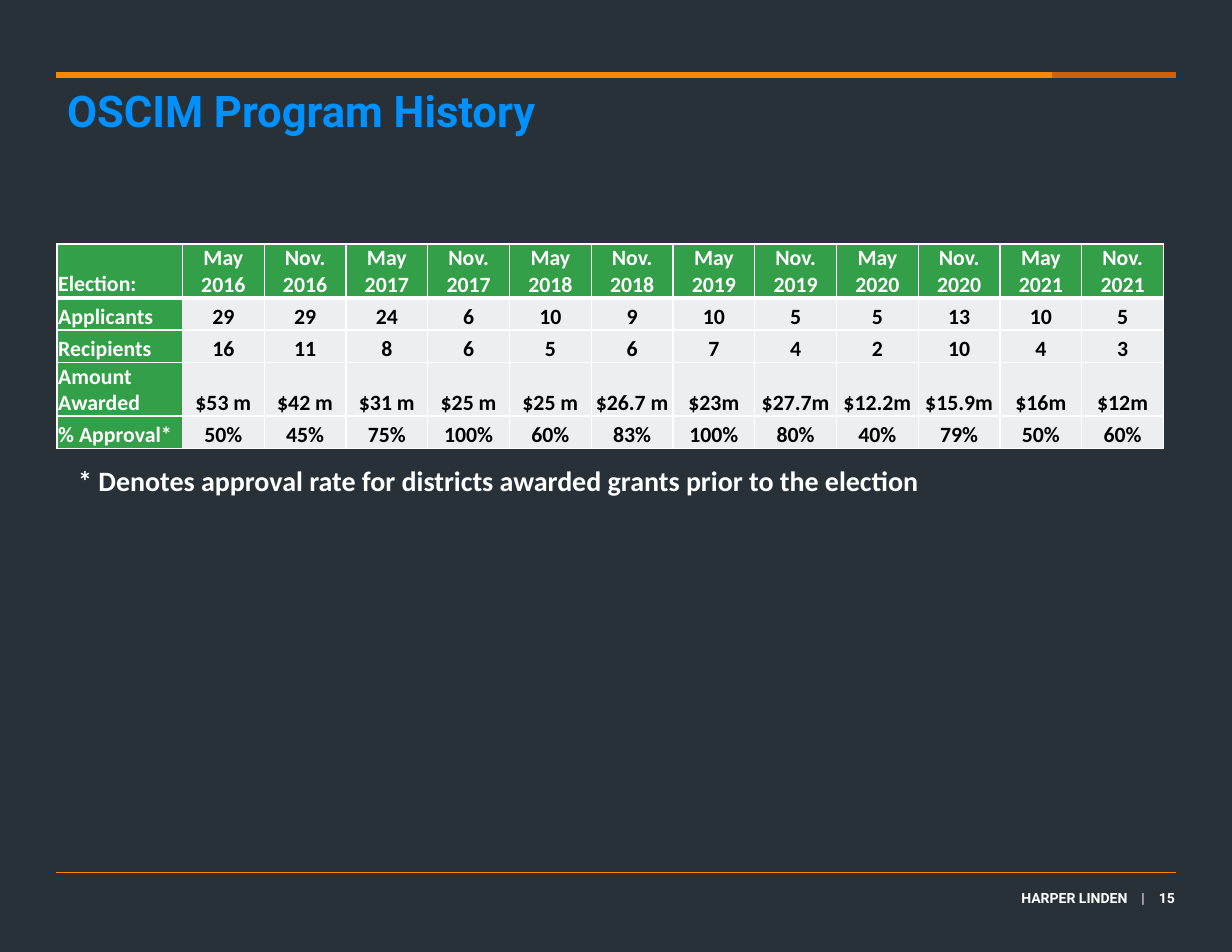
from dataclasses import dataclass

from lxml import etree
from pptx import Presentation
from pptx import util as u
from pptx.dml.color import RGBColor
from pptx.enum import shapes, text
from pptx.oxml import ns

COLORS = {
    "background": "283138",
    "orange": "FF8600",
    "rust": "D2610C",
    "blue": "0091FE",
    "green": "339F48",
    "pale": "EDEEEF",
    "white": "FFFFFF",
    "black": "000000",
}


@dataclass
class Rule:
    left: float
    right: float
    y: float
    color: str
    weight: float


@dataclass
class Style:
    font: str
    size: float
    color: str
    bold: bool = True


RULES = [
    Rule(0.5, 10.5, 0.67, "orange", 3.5),
    Rule(9.39, 10.5, 0.67, "rust", 3.5),
    Rule(0.5, 10.5, 7.79, "orange", 1),
]
HISTORY = [
    ["Election:", "May 2016", "Nov. 2016", "May 2017", "Nov. 2017", "May\n2018", "Nov.\n2018",
     "May\n2019", "Nov.\n2019", "May 2020", "Nov. 2020", "May\n2021", "Nov.\n2021"],
    ["Applicants", "29", "29", "24", "6", "10", "9", "10", "5", "5", "13", "10", "5"],
    ["Recipients", "16", "11", "8", "6", "5", "6", "7", "4", "2", "10", "4", "3"],
    ["Amount Awarded", "$53 m", "$42 m", "$31 m", "$25 m", "$25 m", "$26.7 m", "$23m",
     "$27.7m", "$12.2m", "$15.9m", "$16m", "$12m"],
    ["% Approval*", "50%", "45%", "75%", "100%", "60%", "83%", "100%", "80%", "40%", "79%",
     "50%", "60%"],
]
ROW_HEIGHTS = [0.47, 0.29, 0.29, 0.47, 0.29]
LABEL_WIDTH, ELECTION_WIDTH = 1.12, 0.73
FOOTER_GAP = 6.75


def rgb(color: str) -> RGBColor:
    return RGBColor.from_string(COLORS[color])


def style_run(run, style: Style) -> None:
    run.font.name = style.font
    run.font.size = u.Pt(style.size)
    run.font.bold = style.bold
    run.font.color.rgb = rgb(style.color)


def style_frame(frame, style: Style, align: text.PP_ALIGN) -> None:
    for paragraph in frame.paragraphs:
        paragraph.alignment = align
        for run in paragraph.runs:
            style_run(run, style)


def draw_rule(slide, rule: Rule) -> None:
    line = slide.shapes.add_connector(
        shapes.MSO_CONNECTOR.STRAIGHT, u.Inches(rule.left), u.Inches(rule.y),
        u.Inches(rule.right), u.Inches(rule.y))
    line.line.color.rgb = rgb(rule.color)
    line.line.width = u.Pt(rule.weight)
    etree.SubElement(line._element.spPr, ns.qn("a:effectLst"))


def add_frame(slide, left: float, top: float, width: float, height: float, inset: bool = False):
    """Add a wrapping text box, without margins unless inset, and return its frame."""
    box = slide.shapes.add_textbox(*map(u.Inches, (left, top, width, height)))
    frame = box.text_frame
    frame.word_wrap = True
    if not inset:
        frame.margin_left = frame.margin_right = frame.margin_top = frame.margin_bottom = 0
    return frame


def set_borders(cell, top: float, bottom: float) -> None:
    """Draw white borders, 1 pt at the sides and the given points above and below."""
    properties = cell._tc.get_or_add_tcPr()
    for side, weight in (("L", 1), ("R", 1), ("T", top), ("B", bottom)):
        border = etree.SubElement(properties, ns.qn(f"a:ln{side}"), w=str(u.Pt(weight)))
        fill = etree.SubElement(border, ns.qn("a:solidFill"))
        etree.SubElement(fill, ns.qn("a:srgbClr"), val=COLORS["white"])


def draw_history(slide) -> None:
    elections = len(HISTORY[0]) - 1
    table = slide.shapes.add_table(
        len(HISTORY), elections + 1, u.Inches(0.51), u.Inches(2.18),
        u.Inches(LABEL_WIDTH + elections * ELECTION_WIDTH), u.Inches(sum(ROW_HEIGHTS))).table
    for index, column in enumerate(table.columns):
        column.width = u.Inches(ELECTION_WIDTH if index else LABEL_WIDTH)
    for r, (values, height) in enumerate(zip(HISTORY, ROW_HEIGHTS)):
        table.rows[r].height = u.Inches(height)
        for c, value in enumerate(values):
            cell = table.cell(r, c)
            heading = r == 0 or c == 0
            cell.text_frame.text = value
            style_frame(cell.text_frame, Style("Calibri", 14, "white" if heading else "black"),
                        text.PP_ALIGN.CENTER if c else text.PP_ALIGN.LEFT)
            cell.vertical_anchor = text.MSO_ANCHOR.BOTTOM
            cell.margin_left = cell.margin_right = cell.margin_top = u.Inches(0.01)
            cell.margin_bottom = 0
            set_borders(cell, top=3 if r == 1 else 1, bottom=3 if r == 0 else 1)
            cell.fill.solid()
            cell.fill.fore_color.rgb = rgb("green" if heading else "pale")


def draw_footer(slide) -> None:
    paragraph = add_frame(slide, 7.26, 7.94, 3.23, 0.15).paragraphs[0]
    paragraph.alignment = text.PP_ALIGN.RIGHT
    for part in ("HARPER LINDEN", " ", "|", " ", "15"):
        run = paragraph.add_run()
        run.text = part
        style_run(run, Style("Roboto", 9, "white", bold=part != "|"))
        if part == " ":
            run.font._element.set("spc", str(int(FOOTER_GAP * 100)))


def main() -> None:
    deck = Presentation()
    deck.slide_width, deck.slide_height = u.Inches(11), u.Inches(8.5)
    slide = deck.slides.add_slide(deck.slide_layouts[6])
    slide.background.fill.solid()
    slide.background.fill.fore_color.rgb = rgb("background")

    for rule in RULES:
        draw_rule(slide, rule)
    draw_footer(slide)

    title = add_frame(slide, 0.6, 0.75, 9.8, 0.44)
    title.text = "OSCIM Program History"
    style_frame(title, Style("Roboto", 28, "blue"), text.PP_ALIGN.LEFT)

    footnote = add_frame(slide, 0.6, 4.09, 9.8, 0.4, inset=True)
    footnote.text = "* Denotes approval rate for districts awarded grants prior to the election"
    style_frame(footnote, Style("Calibri", 18, "white"), text.PP_ALIGN.JUSTIFY)
    footnote.paragraphs[0].space_after = u.Pt(18)

    draw_history(slide)
    deck.save("out.pptx")


if __name__ == "__main__":
    main()
